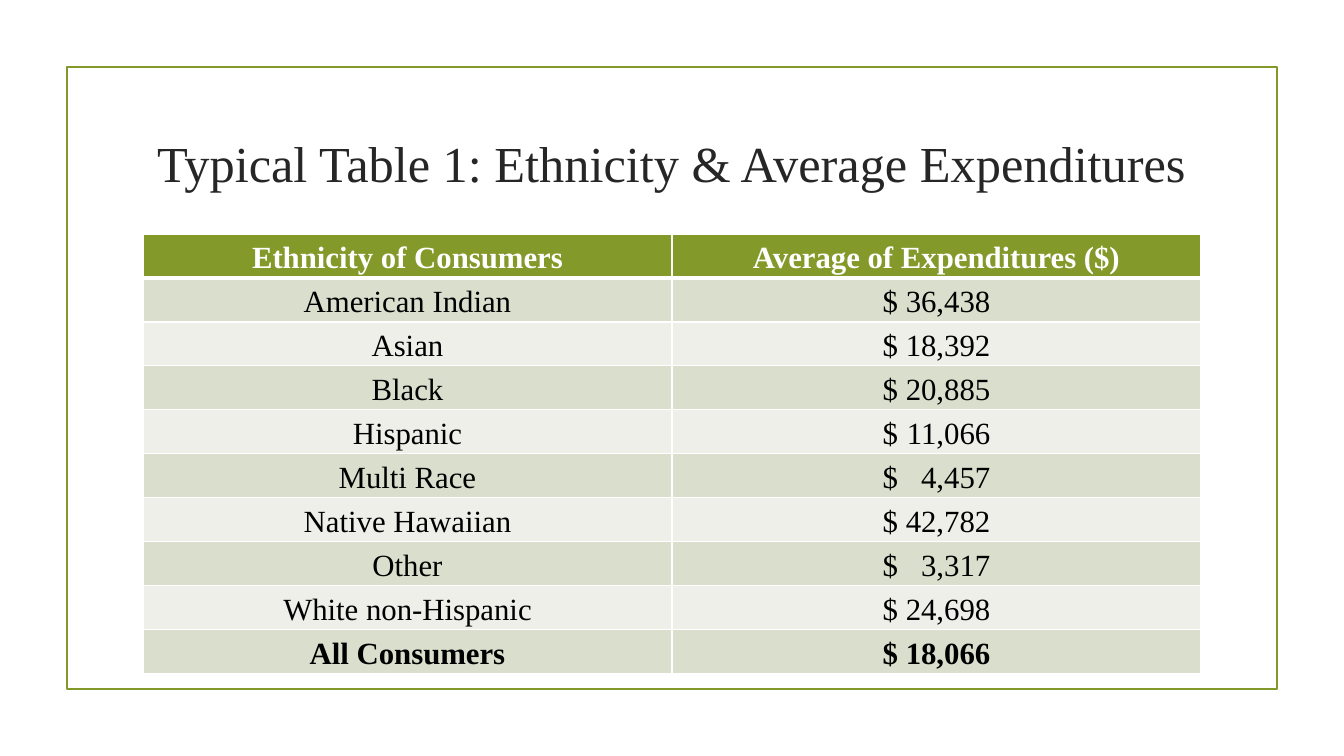
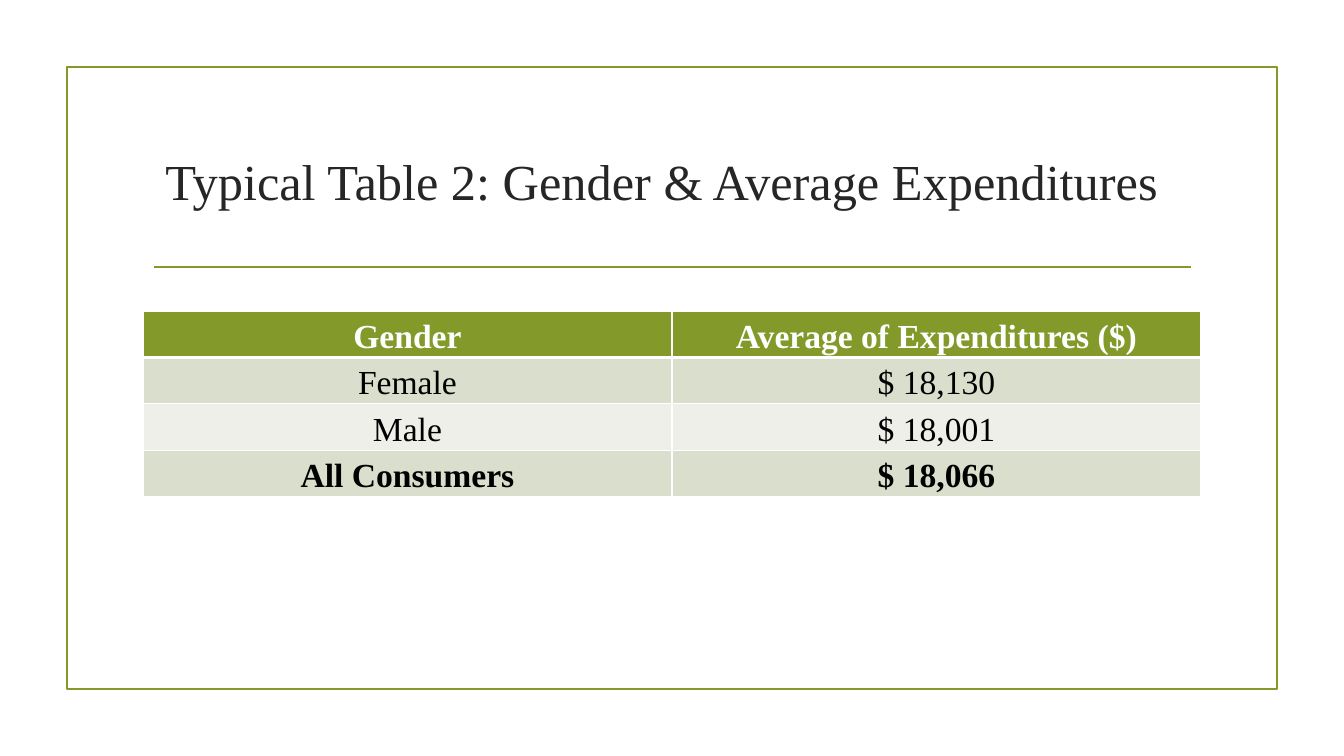
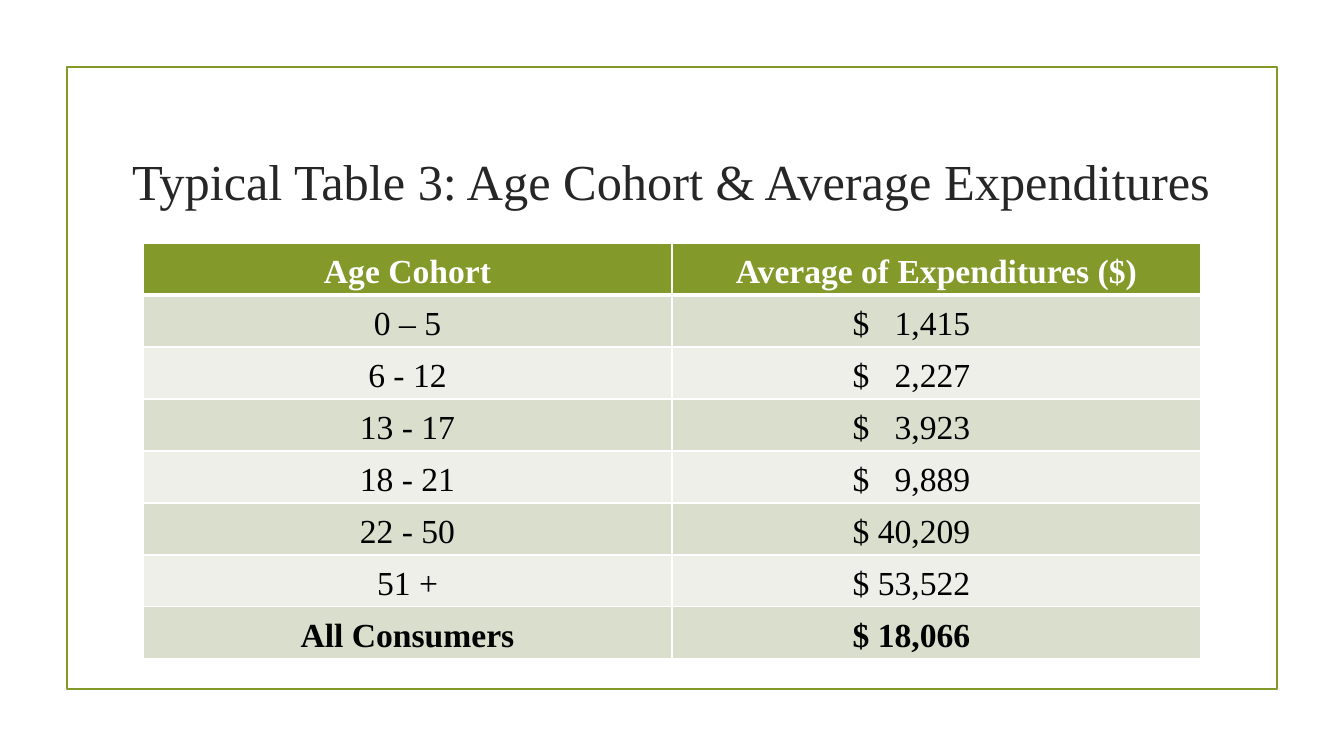
from dataclasses import dataclass

from lxml.etree import SubElement
from pptx import Presentation
from pptx.dml.color import RGBColor
from pptx.enum.shapes import MSO_CONNECTOR, MSO_SHAPE
from pptx.enum.text import MSO_ANCHOR, PP_ALIGN
from pptx.oxml import parse_xml
from pptx.oxml.ns import nsdecls, qn
from pptx.util import Emu, Pt

# Shared look
GREEN, WHITE, BLACK, TITLE_GRAY = "83992A", "FFFFFF", "000000", "262626"
BANDS = ("D9DECD", "EDEFE8")
FONT = "Times New Roman"
TITLE_SIZE = 36
LINE_WIDTH = 1.25

# Shared geometry, in px
PAGE_WIDTH, PAGE_HEIGHT = 1344, 756
EMU_PER_PX = 12192000 / PAGE_WIDTH
TABLE_LEFT, COLUMN_WIDTH = 143, 529
CELL_MARGIN = 7
PX_PER_POINT = 1.4
AMOUNT_EMS = 3.5  # width of "$ 00,000"


@dataclass(frozen=True)
class Area:
    left: int
    top: int
    width: int
    height: int


@dataclass(frozen=True)
class TablePage:
    title: str
    title_area: Area
    header: str
    rows: tuple[tuple[str, str], ...]
    table_top: int
    row_height: int
    font_size: int
    amount_shift: int = 0
    has_rule: bool = False


FRAME = Area(67, 67, 1210, 622)
RULE = Area(154, 267, 1037, 0)
AMOUNT_HEADER = "Average of Expenditures ($)"
TOTAL = ("All Consumers", "18,066")

PAGES = (
    TablePage(
        "Typical Table 1: Ethnicity & Average Expenditures",
        Area(143, 95, 1058, 135),
        "Ethnicity of Consumers",
        (
            ("American Indian", "36,438"),
            ("Asian", "18,392"),
            ("Black", "20,885"),
            ("Hispanic", "11,066"),
            ("Multi Race", "4,457"),
            ("Native Hawaiian", "42,782"),
            ("Other", "3,317"),
            ("White non-Hispanic", "24,698"),
        ),
        table_top=234, row_height=44, font_size=22,
    ),
    TablePage(
        "Typical Table 2: Gender & Average Expenditures",
        Area(113, 108, 1098, 144),
        "Gender",
        (("Female", "18,130"), ("Male", "18,001")),
        table_top=311, row_height=41, font_size=24, has_rule=True,
    ),
    TablePage(
        "Typical Table 3: Age Cohort & Average Expenditures",
        Area(79, 108, 1185, 144),
        "Age Cohort",
        (
            ("0 – 5", "1,415"),
            ("6 - 12", "2,227"),
            ("13 - 17", "3,923"),
            ("18 - 21", "9,889"),
            ("22 - 50", "40,209"),
            ("51 +", "53,522"),
        ),
        table_top=243, row_height=52, font_size=24, amount_shift=-25,
    ),
)


def px(length: float) -> Emu:
    return Emu(round(length * EMU_PER_PX))


def color(value: str) -> RGBColor:
    return RGBColor.from_string(value)


def place(area: Area) -> tuple[Emu, Emu, Emu, Emu]:
    return px(area.left), px(area.top), px(area.width), px(area.height)


def write(para, text: str, *, size: int, ink: str, bold: bool = False,
          align=PP_ALIGN.CENTER, spacing: float = 1.0) -> None:
    para.alignment = align
    para.line_spacing = spacing
    span = para.add_run()
    span.text = text
    span.font.name = FONT
    span.font.size = Pt(size)
    span.font.bold = bold
    span.font.color.rgb = color(ink)


def add_frame(page) -> None:
    frame = page.shapes.add_shape(MSO_SHAPE.RECTANGLE, *place(FRAME))
    frame.shadow.inherit = False
    frame.fill.background()
    frame.line.color.rgb = color(GREEN)
    frame.line.width = Pt(LINE_WIDTH)


def add_rule(page) -> None:
    rule = page.shapes.add_connector(
        MSO_CONNECTOR.STRAIGHT, px(RULE.left), px(RULE.top),
        px(RULE.left + RULE.width), px(RULE.top))
    rule.line.color.rgb = color(GREEN)
    rule.line.width = Pt(LINE_WIDTH)
    SubElement(rule._element.spPr, qn("a:effectLst"))


def add_title(page, text: str, area: Area) -> None:
    box = page.shapes.add_textbox(*place(area))
    box.text_frame.word_wrap = True
    box.text_frame.vertical_anchor = MSO_ANCHOR.MIDDLE
    write(box.text_frame.paragraphs[0], text, size=TITLE_SIZE, ink=TITLE_GRAY)


def style_cell(cell, fill: str, top: int, bottom: int) -> None:
    cell.vertical_anchor = MSO_ANCHOR.MIDDLE
    cell.margin_left = cell.margin_right = px(CELL_MARGIN)
    cell.margin_top = cell.margin_bottom = 0
    cell.fill.solid()
    cell.fill.fore_color.rgb = color(fill)
    # Borders stand before the fill
    borders = (("lnL", 1), ("lnR", 1), ("lnT", top), ("lnB", bottom))
    for index, (tag, width) in enumerate(borders):
        cell._tc.tcPr.insert(index, parse_xml(
            f'<a:{tag} {nsdecls("a")} w="{Pt(width)}"><a:solidFill>'
            f'<a:srgbClr val="{WHITE}"/></a:solidFill></a:{tag}>'))


def write_amount(cell, amount: str, shift: int, **text_format) -> None:
    """Dollar sign on the left, digits lined up at a right tab."""
    width = AMOUNT_EMS * text_format["size"] * PX_PER_POINT
    cell.margin_left = px((COLUMN_WIDTH - width) / 2 + shift)
    para = cell.text_frame.paragraphs[0]
    tabs = SubElement(para._p.get_or_add_pPr(), qn("a:tabLst"))
    SubElement(tabs, qn("a:tab"), pos=str(px(width)), algn="r")
    write(para, f"$\t{amount}", align=PP_ALIGN.LEFT, **text_format)


def add_expenditures(page, content: TablePage) -> None:
    rows = ((content.header, AMOUNT_HEADER), *content.rows, TOTAL)
    area = Area(TABLE_LEFT, content.table_top, 2 * COLUMN_WIDTH,
                len(rows) * content.row_height)
    table = page.shapes.add_table(len(rows), 2, *place(area)).table
    table.horz_banding = False
    for column in table.columns:
        column.width = px(COLUMN_WIDTH)
    for index, (label, amount) in enumerate(rows):
        table.rows[index].height = px(content.row_height)
        is_header = index == 0
        label_cell, amount_cell = table.cell(index, 0), table.cell(index, 1)
        for cell in (label_cell, amount_cell):
            style_cell(cell, GREEN if is_header else BANDS[(index - 1) % 2],
                       top=3 if index == 1 else 1,
                       bottom=3 if is_header else 1)
        text_format = dict(size=content.font_size, spacing=1.15,
                           ink=WHITE if is_header else BLACK,
                           bold=is_header or index == len(rows) - 1)
        write(label_cell.text_frame.paragraphs[0], label, **text_format)
        if is_header:
            write(amount_cell.text_frame.paragraphs[0], amount, **text_format)
        else:
            write_amount(amount_cell, amount, content.amount_shift, **text_format)


def main() -> None:
    deck = Presentation()
    deck.slide_width, deck.slide_height = px(PAGE_WIDTH), px(PAGE_HEIGHT)
    for content in PAGES:
        page = deck.slides.add_slide(deck.slide_layouts[6])
        add_frame(page)
        if content.has_rule:
            add_rule(page)
        add_title(page, content.title, content.title_area)
        add_expenditures(page, content)
    deck.save("out.pptx")


if __name__ == "__main__":
    main()
